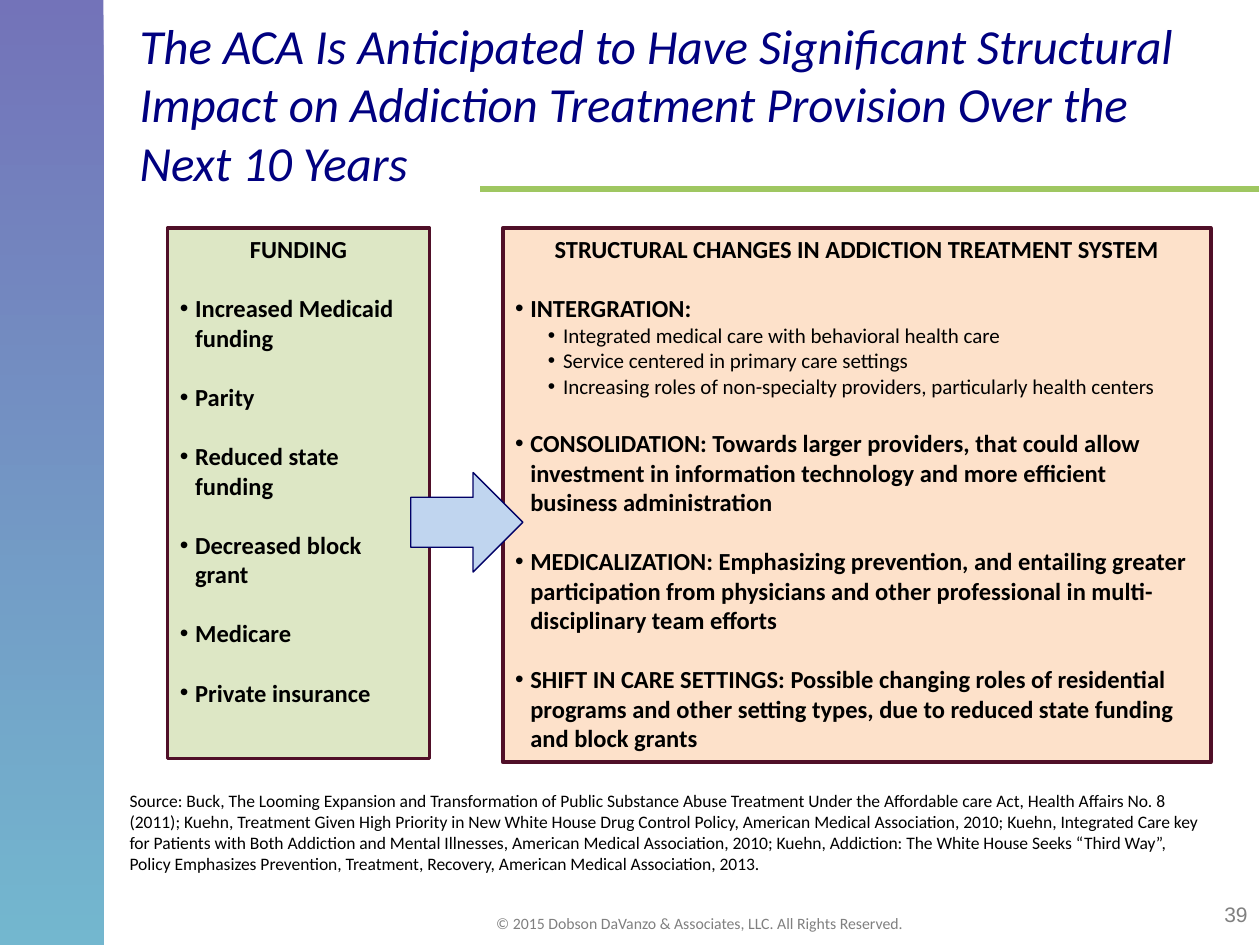
from lxml import etree
from pptx import Presentation
from pptx.dml.color import RGBColor
from pptx.enum import shapes, text
from pptx.oxml import ns
from pptx.util import Inches, Pt

NAVY = RGBColor(0x00, 0x00, 0x80)
TEAL = RGBColor(0x00, 0x7D, 0xA8)
LIME = RGBColor(0x9F, 0xC7, 0x61)
GRAY = RGBColor(0x80, 0x80, 0x80)
BLACK = RGBColor(0x00, 0x00, 0x00)
MAROON = RGBColor(0x50, 0x0F, 0x28)
PALE_GREEN = RGBColor(0xDD, 0xE7, 0xC5)
PEACH = RGBColor(0xFD, 0xE1, 0xCA)
PALE_BLUE = RGBColor(0xC0, 0xD5, 0xEF)
DARK_BLUE = RGBColor(0x00, 0x00, 0x66)

HEAD = {"size": Pt(14), "bold": True}
SUB = {"size": Pt(12), "bold": False}
GAP = Pt(17)

TITLE = ("The ACA Is Anticipated to Have Significant Structural Impact on "
         "Addiction Treatment Provision Over the Next 10 Years")
SOURCE = (
    "Source: Buck, The Looming Expansion and Transformation of Public Substance "
    "Abuse Treatment Under the Affordable care Act, Health Affairs No. 8 (2011); "
    "Kuehn, Treatment Given High Priority in New White House Drug Control Policy, "
    "American Medical Association, 2010; Kuehn, Integrated Care key for Patients "
    "with Both Addiction and Mental Illnesses, American Medical Association, 2010; "
    "Kuehn, Addiction: The White House Seeks “Third Way”, Policy Emphasizes "
    "Prevention, Treatment, Recovery, American Medical Association, 2013.")
COPYRIGHT = "© 2015 Dobson DaVanzo & Associates, LLC. All Rights Reserved."

# Each bullet is a main point with its sub-points
FUNDING = [
    ("Increased Medicaid funding", []),
    ("Parity", []),
    ("Reduced state funding", []),
    ("Decreased block grant", []),
    ("Medicare", []),
    ("Private insurance", []),
]
CHANGES = [
    ("INTERGRATION:", [
        "Integrated medical care with behavioral health care",
        "Service centered in primary care settings",
        "Increasing roles of non-specialty providers, particularly health centers",
    ]),
    ("CONSOLIDATION: Towards larger providers, that could allow investment in "
     "information technology and more efficient business administration", []),
    ("MEDICALIZATION: Emphasizing prevention, and entailing greater participation "
     "from physicians and other professional in multi-disciplinary team efforts", []),
    ("SHIFT IN CARE SETTINGS: Possible changing roles of residential programs and "
     "other setting types, due to reduced state funding and block grants", []),
]


def inches(*lengths):
    return [Inches(length) for length in lengths]


def write(para, words, color=BLACK, name="Calibri", **font):
    span = para.add_run()
    span.text = words
    span.font.color.rgb = color
    for key, value in {"name": name, **font}.items():
        setattr(span.font, key, value)


def add_text(page, place, words, align=text.PP_ALIGN.LEFT,
             anchor=text.MSO_ANCHOR.TOP, **font):
    frame = page.shapes.add_textbox(*inches(*place)).text_frame
    frame.word_wrap = True
    frame.vertical_anchor = anchor
    para = frame.paragraphs[0]
    para.alignment = align
    write(para, words, **font)


def add_block(page, kind, place, fill, line, width):
    shape = page.shapes.add_shape(kind, *inches(*place))
    shape.shadow.inherit = False
    shape.fill.solid()
    shape.fill.fore_color.rgb = fill
    shape.line.color.rgb = line
    shape.line.width = Pt(width)
    return shape


def add_bullet(frame, words, indent, font, before=0):
    para = frame.add_paragraph()
    para.alignment = text.PP_ALIGN.LEFT
    para.space_before = before
    props = para._p.get_or_add_pPr()
    props.set("marL", str(Inches(indent)))
    props.set("indent", str(Inches(-0.12)))
    etree.SubElement(props, ns.qn("a:buFont"), typeface="Arial")
    etree.SubElement(props, ns.qn("a:buChar"), char="•")
    write(para, words, **font)


def add_panel(page, place, fill, heading, points):
    box = add_block(page, shapes.MSO_SHAPE.RECTANGLE, place, fill, MAROON, 2)
    frame = box.text_frame
    frame.word_wrap = True
    frame.vertical_anchor = text.MSO_ANCHOR.TOP
    frame.paragraphs[0].alignment = text.PP_ALIGN.CENTER
    write(frame.paragraphs[0], heading, **HEAD)
    for point, details in points:
        add_bullet(frame, point, 0.12, HEAD, GAP)
        for detail in details:
            add_bullet(frame, detail, 0.38, SUB)


def add_side_band(page):
    band = page.shapes.add_shape(shapes.MSO_SHAPE.RECTANGLE, *inches(0, 0, 0.82, 7.5))
    band.shadow.inherit = False
    band.line.fill.background()
    band.fill.gradient()
    band.fill.gradient_angle = 270
    for stop, color in zip(band.fill.gradient_stops, (NAVY, TEAL)):
        stop.color.rgb = color
    for color in band._element.spPr.iter(ns.qn("a:srgbClr")):
        etree.SubElement(color, ns.qn("a:alpha"), val="55000")


def add_rule(page):
    rule = page.shapes.add_connector(shapes.MSO_CONNECTOR.STRAIGHT,
                                     *inches(3.81, 1.5, 9.99, 1.5))
    rule.line.color.rgb = LIME
    rule.line.width = Pt(3)
    etree.SubElement(rule._element.spPr, ns.qn("a:effectLst"))


def main():
    deck = Presentation()
    deck.slide_width, deck.slide_height = inches(10, 7.5)
    page = deck.slides.add_slide(deck.slide_layouts[6])

    # Frame of the page
    add_rule(page)
    add_side_band(page)
    add_text(page, (8.92, 7.11, 1.08, 0.3), "39", text.PP_ALIGN.RIGHT,
             name="Arial", size=Pt(12), color=GRAY)
    add_text(page, (3.41, 7.2, 4.28, 0.21), COPYRIGHT, text.PP_ALIGN.CENTER,
             size=Pt(9), color=GRAY)

    # Title and source note
    add_text(page, (1.01, 0.08, 8.59, 1.48), TITLE, anchor=text.MSO_ANCHOR.MIDDLE,
             size=Pt(28), italic=True, color=NAVY)
    add_text(page, (0.93, 6.22, 8.75, 0.77), SOURCE, size=Pt(10))

    # Funding leads to structural changes
    add_panel(page, (1.33, 1.81, 2.08, 4.21), PALE_GREEN, "FUNDING", FUNDING)
    add_panel(page, (3.99, 1.81, 5.62, 4.24), PEACH,
              "STRUCTURAL CHANGES IN ADDICTION TREATMENT SYSTEM", CHANGES)
    add_block(page, shapes.MSO_SHAPE.RIGHT_ARROW, (3.26, 3.75, 0.89, 0.79),
              PALE_BLUE, DARK_BLUE, 0.75)

    deck.save("out.pptx")


if __name__ == "__main__":
    main()
